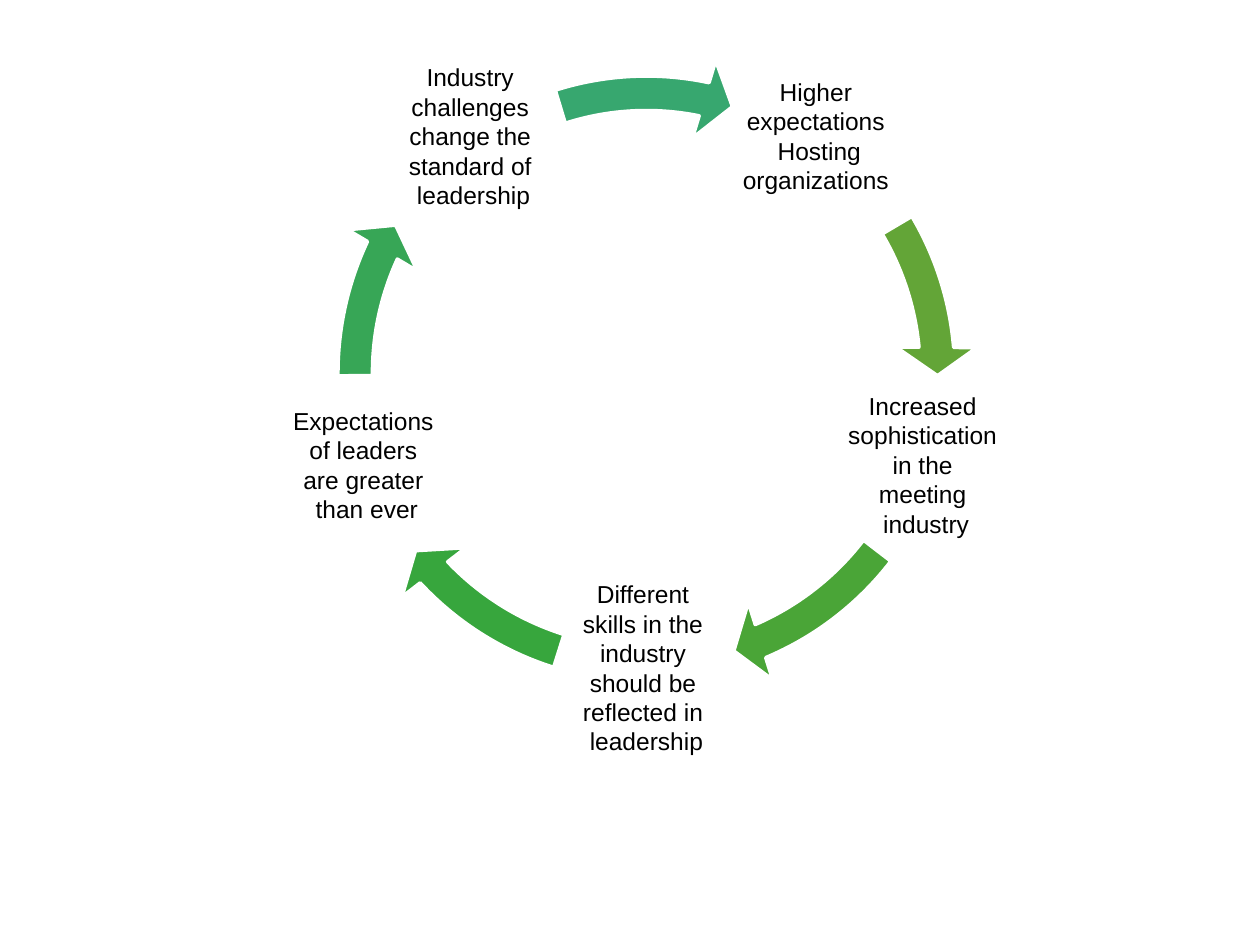
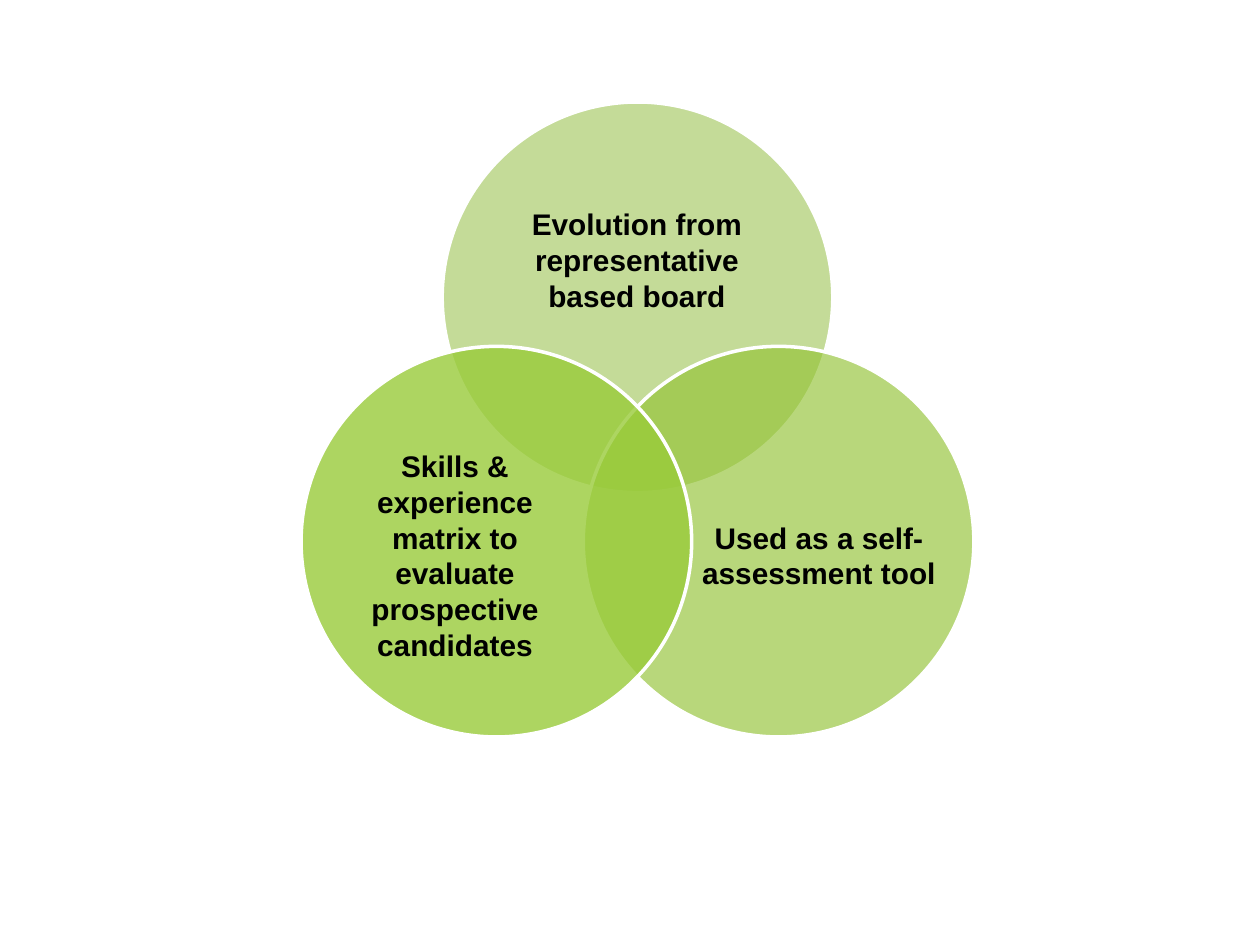
import math
import pptx
import pptx.util
import pptx.dml.color
import pptx.enum.shapes
import pptx.enum.text
import pptx.oxml.ns
from lxml import etree

Pt = pptx.util.Pt
KIND = pptx.enum.shapes.MSO_SHAPE


def tint(code):
    return pptx.dml.color.RGBColor.from_string(code)


def ring(mid, reach, start, count):
    """Points spaced evenly, clockwise, around a centre."""
    for step in range(count):
        turn = math.radians(start + step * 360 / count)
        yield mid[0] + reach * math.cos(turn), mid[1] + reach * math.sin(turn)


class Deck:
    face, ink, edge = "Arial", "000000", "FFFFFF"

    def __init__(self):
        self.file = pptx.Presentation()
        self.file.slide_width, self.file.slide_height = Pt(720), Pt(540)
        self.slide = None

    def page(self):
        self.slide = self.file.slides.add_slide(self.file.slide_layouts[6])

    def shape(self, kind, mid, size, fill, clear=None):
        """Filled shape with a white edge, placed by its centre."""
        wide, high = size
        item = self.slide.shapes.add_shape(
            kind, Pt(mid[0] - wide / 2), Pt(mid[1] - high / 2), Pt(wide), Pt(high))
        item.shadow.inherit = False
        item.fill.solid()
        item.fill.fore_color.rgb = tint(fill)
        item.line.color.rgb = tint(self.edge)
        item.line.width = Pt(2)
        if clear:
            paint = item.fill._xPr.find(".//" + pptx.oxml.ns.qn("a:srgbClr"))
            etree.SubElement(paint, pptx.oxml.ns.qn("a:alpha"), val=str(clear * 1000))
        return item

    def arrow(self, mid, size, fill, start, end):
        """Curved arrow between two angles given in degrees."""
        item = self.shape(KIND.CIRCULAR_ARROW, mid, size, fill)
        for spot, value in enumerate((0.052, 3.36, end * 0.6, start * 0.6, 0.061)):
            item.adjustments[spot] = value

    def label(self, mid, size, lines, points, bold=False, pad=0, below=0):
        """Centred text block, placed by its centre."""
        wide, high = size
        box = self.slide.shapes.add_textbox(
            Pt(mid[0] - wide / 2), Pt(mid[1] - high / 2), Pt(wide), Pt(high))
        frame = box.text_frame
        frame.word_wrap = True
        frame.vertical_anchor = pptx.enum.text.MSO_ANCHOR.MIDDLE
        frame.margin_left = frame.margin_right = Pt(pad)
        frame.margin_top = frame.margin_bottom = Pt(pad)
        frame.text = "\n".join(lines)
        for para in frame.paragraphs:
            para.alignment = pptx.enum.text.PP_ALIGN.CENTER
            para.font.name, para.font.size = self.face, Pt(points)
            para.font.bold = bold
            para.font.color.rgb = tint(self.ink)
        para.space_after = Pt(below)


def cycle(deck):
    deck.page()
    hub = (369.4, 213.5)
    # Text, space below, then the arrow that follows: colour, start, end, size
    steps = [
        (["Higher ", "expectations ", "Hosting", "organizations "], 0,
         "63A537", 329.43, 354.89, 379),
        (["Increased ", "sophistication ", "in the ", "meeting ", "industry"], 0,
         "4AA537", 37.55, 66.92, 379),
        (["Different ", "skills in the ", "industry ", "should be ",
          "reflected in ", "leadership"], 0, "37A63D", 107.49, 136.85, 379),
        (["Expectations ", "of leaders ", "are greater ", "than ever"], 0,
         "37A656", 179.51, 204.97, 379),
        (["Industry ", "challenges ", "change the ", "standard of ", "leadership"], 21,
         "37A76F", 253.3, 281.1, 389.5),
    ]
    for mid, step in zip(ring(hub, 168, -54, len(steps)), steps):
        lines, below, fill, start, end, high = step
        deck.label(mid, (101, 101), lines, 14, pad=1.4, below=below)
        # All arrow frames share the same top edge, bar the taller last one
        top = 30.2 if high > 379 else 23.8
        deck.arrow((hub[0], top + high / 2), (379, high), fill, start, end)


def venn(deck):
    deck.page()
    # Colour, opacity, text, text centre, text size, space below
    sets = [
        ("8BB833", 50, ["Evolution from", "representative", "based board"],
         (364, 148.3), (163.4, 101), 0),
        ("93C335", 65, ["Used as a self-assessment tool"],
         (468, 317.2), (134, 123), 20),
        ("99CB3A", 80, ["Skills & experience matrix to evaluate prospective candidates"],
         (260, 317.2), (134, 123), 0),
    ]
    for mid, part in zip(ring((364.3, 263), 93.1, -90, len(sets)), sets):
        fill, clear, lines, spot, size, below = part
        deck.shape(KIND.OVAL, mid, (223.2, 223.2), fill, clear)
        deck.label(spot, size, lines, 17, bold=True, below=below)


def main():
    deck = Deck()
    cycle(deck)
    venn(deck)
    deck.file.save("out.pptx")


if __name__ == "__main__":
    main()
